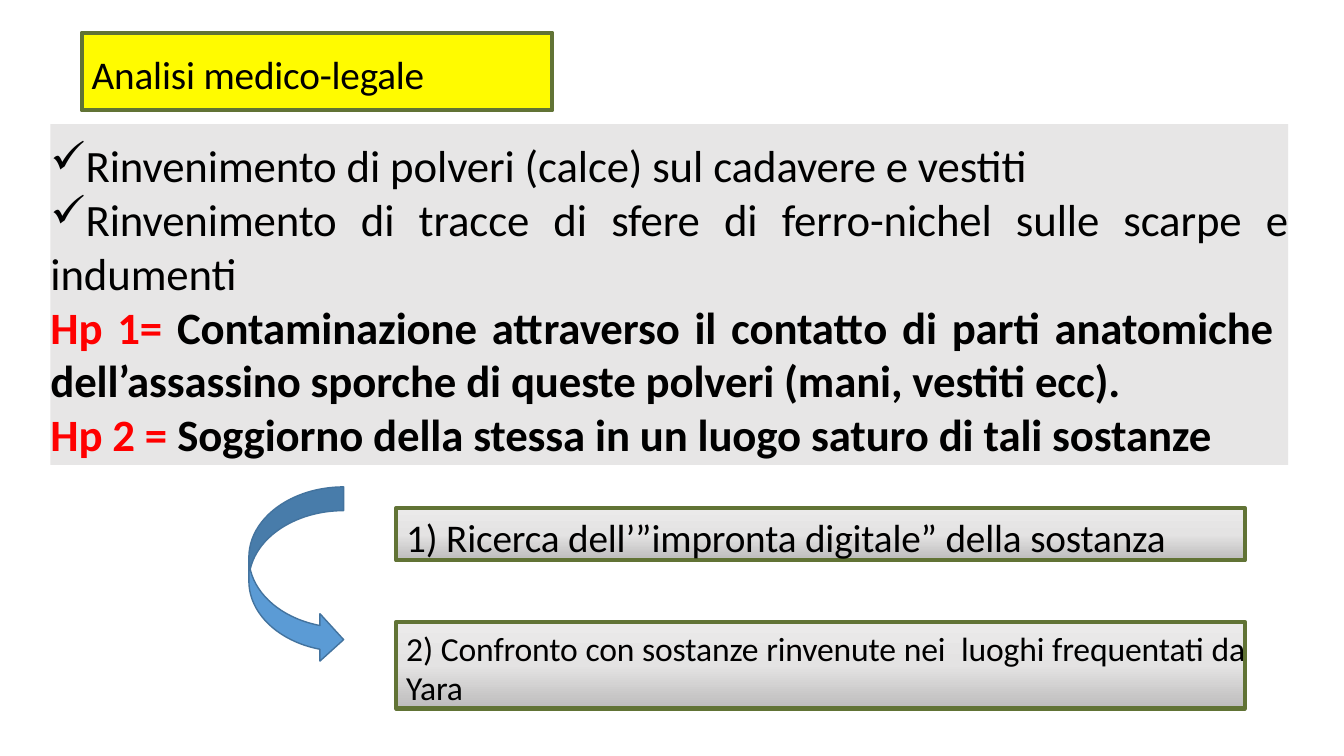
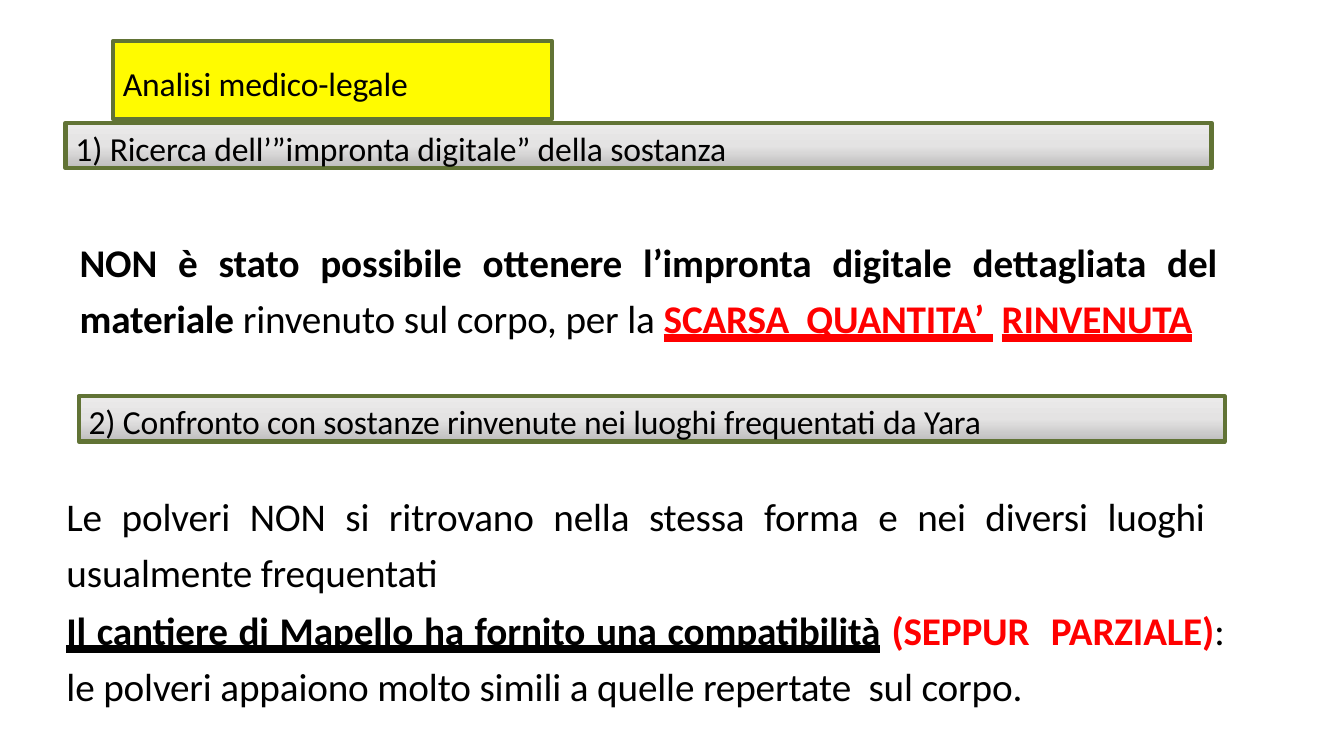
from copy import deepcopy

from lxml import etree
from pptx import Presentation
from pptx import util as u
from pptx.dml.color import RGBColor
from pptx.enum import shapes, text
from pptx.oxml import ns

FONT = "Calibri"
COLORS = {
    "text": "000000",
    "alert": "FF0000",
    "title": "FFFB00",
    "border": "617335",
    "panel": "E7E6E6",
    "arrow": "5B9BD5",
    "arrow_line": "43739E",
}
GRADIENT = [(0, "EBEAEA"), (0.5, "E4E3E3"), (1, "BDBCBC")]
TITLE_HEIGHT = 55.4

PLAIN = {}
BOLD = {"bold": True}
ALERT = {"bold": True, "color": "alert"}
UNDERLINED = {"bold": True, "underline": True}
UNDERLINED_ALERT = {"bold": True, "underline": True, "color": "alert"}


def rgb(name):
    return RGBColor.from_string(COLORS[name])


def points(area):
    return [u.Pt(value) for value in area]


def set_line(shape, color, width):
    shape.line.color.rgb = rgb(color)
    shape.line.width = u.Pt(width)


def set_fill(shape, color):
    shape.fill.solid()
    shape.fill.fore_color.rgb = rgb(color)


def add_span(para, words, size, bold=False, underline=False, color="text"):
    span = para.add_run()
    span.text = words
    font = span.font
    font.name, font.size, font.bold = FONT, u.Pt(size), bold
    font.color.rgb = rgb(color)
    if underline:
        font.underline = text.MSO_UNDERLINE.HEAVY_LINE
    span._r.get_or_add_rPr().set("spc", "-10")


def add_check(para):
    properties = para._p.get_or_add_pPr()
    bullet = etree.SubElement(properties, ns.qn("a:buChar"))
    bullet.set("char", "✓")


def write(shape, paragraphs, size, left=0, top=0, before=0, spacing=1.0,
          align="LEFT", anchor="TOP", checks=0):
    """Fill a shape with paragraphs of (words, style); the first `checks` get a tick."""
    frame = shape.text_frame
    frame.word_wrap = True
    frame.auto_size = text.MSO_AUTO_SIZE.NONE
    frame.vertical_anchor = text.MSO_ANCHOR[anchor]
    frame.margin_left, frame.margin_top = u.Pt(left), u.Pt(top)
    frame.margin_right = frame.margin_bottom = 0
    for index, spans in enumerate(paragraphs):
        para = frame.add_paragraph() if index else frame.paragraphs[0]
        para.alignment = text.PP_ALIGN[align]
        para.line_spacing = spacing
        para.space_before, para.space_after = u.Pt(before), u.Pt(0)
        if index < checks:
            add_check(para)
        for words, style in spans:
            add_span(para, words, size, **style)


def add_titled_slide(deck, left, top, width, size):
    page = deck.slides.add_slide(deck.slide_layouts[5])
    title = page.shapes.title
    title.left, title.top, title.width, title.height = points(
        (left, top, width, TITLE_HEIGHT))
    set_fill(title, "title")
    set_line(title, "border", 3)
    write(title, [[("Analisi medico-legale", PLAIN)]], size,
          left=7.2, top=3.6, before=3.6, anchor="MIDDLE")
    return page


def add_preset(page, kind, area):
    shape = page.shapes.add_shape(kind, *points(area))
    shape.shadow.inherit = False
    return shape


def fill_gradient(shape):
    fill = shape.fill
    fill.gradient()
    fill.gradient_angle = 270
    stop_list = shape._element.spPr.find(".//" + ns.qn("a:gsLst"))
    stop_list.append(deepcopy(stop_list[0]))
    for stop, (position, color) in zip(fill.gradient_stops, GRADIENT):
        stop.position = position
        stop.color.rgb = RGBColor.from_string(color)


def add_step(page, words, area, size, top=3.6, before=3.6, **layout):
    box = add_preset(page, shapes.MSO_SHAPE.RECTANGLE, area)
    fill_gradient(box)
    set_line(box, "border", 3)
    write(box, [[(words, PLAIN)]], size, left=7.2, top=top, before=before, **layout)


def add_panel(page, paragraphs, area):
    panel = add_preset(page, shapes.MSO_SHAPE.RECTANGLE, area)
    set_fill(panel, "panel")
    panel.line.fill.background()
    write(panel, paragraphs, 32, top=10, align="JUSTIFY", checks=2)


def add_curved_arrow(page, area):
    arrow = add_preset(page, shapes.MSO_SHAPE.CURVED_RIGHT_ARROW, area)
    set_fill(arrow, "arrow")
    set_line(arrow, "arrow_line", 1)


def add_body(page, paragraphs, area):
    box = page.shapes.add_textbox(*points(area))
    write(box, paragraphs, 28, left=0.7, top=0.7, before=0.5,
          spacing=1.2, align="JUSTIFY")


def build_findings(deck):
    page = add_titled_slide(deck, 58.3, 23.4, 336.2, 28)
    add_panel(page, [
        [("Rinvenimento di polveri (calce) sul cadavere e vestiti", PLAIN)],
        [("Rinvenimento di tracce di sfere di ferro-nichel sulle scarpe e "
          "indumenti", PLAIN)],
        [("Hp 1= ", ALERT),
         ("Contaminazione attraverso il contatto di parti anatomiche  "
          "dell’assassino sporche di queste polveri (mani, vestiti ecc).", BOLD)],
        [("Hp 2 = ", ALERT),
         ("Soggiorno della stessa in un luogo saturo di tali sostanze", BOLD)],
    ], (36, 88.6, 884.2, 243.4))
    add_step(page, "1) Ricerca dell’”impronta digitale” della sostanza",
             (283, 362.9, 606.2, 37.4), 28, align="JUSTIFY")
    add_step(page, "2) Confronto con sostanze rinvenute nei  luoghi frequentati da Yara",
             (283, 444.2, 606.2, 61.9), 24,
             top=5, before=5.2, spacing=u.Pt(28), align="JUSTIFY")
    add_curved_arrow(page, (177.8, 347.8, 67.7, 126))


def build_results(deck):
    page = add_titled_slide(deck, 80.6, 29.5, 313.9, 24)
    add_step(page, "1) Ricerca dell’”impronta digitale” della sostanza",
             (46.8, 87.8, 818.6, 32.4), 24)
    add_step(page, "2) Confronto con sostanze rinvenute nei luoghi frequentati da Yara",
             (56.2, 283, 818.6, 32.4), 24)
    add_body(page, [
        [("Le polveri NON si ritrovano nella stessa forma e nei diversi luoghi  "
          "usualmente frequentati", PLAIN)],
        [("Il cantiere di Mapello ha fornito una compatibilità", UNDERLINED),
         (" ", BOLD),
         ("(SEPPUR  PARZIALE)", ALERT),
         (": le polveri appaiono molto simili a quelle repertate  sul corpo.",
          PLAIN)],
    ], (46.8, 344.2, 828, 163.4))
    add_body(page, [
        [("NON è stato possibile ottenere l’impronta digitale dettagliata del  "
          "materiale ", BOLD),
         ("rinvenuto sul corpo, per la ", PLAIN),
         ("SCARSA  QUANTITA’ ", UNDERLINED_ALERT),
         (" ", ALERT),
         ("RINVENUTA", UNDERLINED_ALERT)],
    ], (56.2, 162.7, 828, 79.2))


def main():
    deck = Presentation()
    deck.slide_width, deck.slide_height = u.Pt(960), u.Pt(540)
    build_findings(deck)
    build_results(deck)
    deck.save("out.pptx")


if __name__ == "__main__":
    main()
